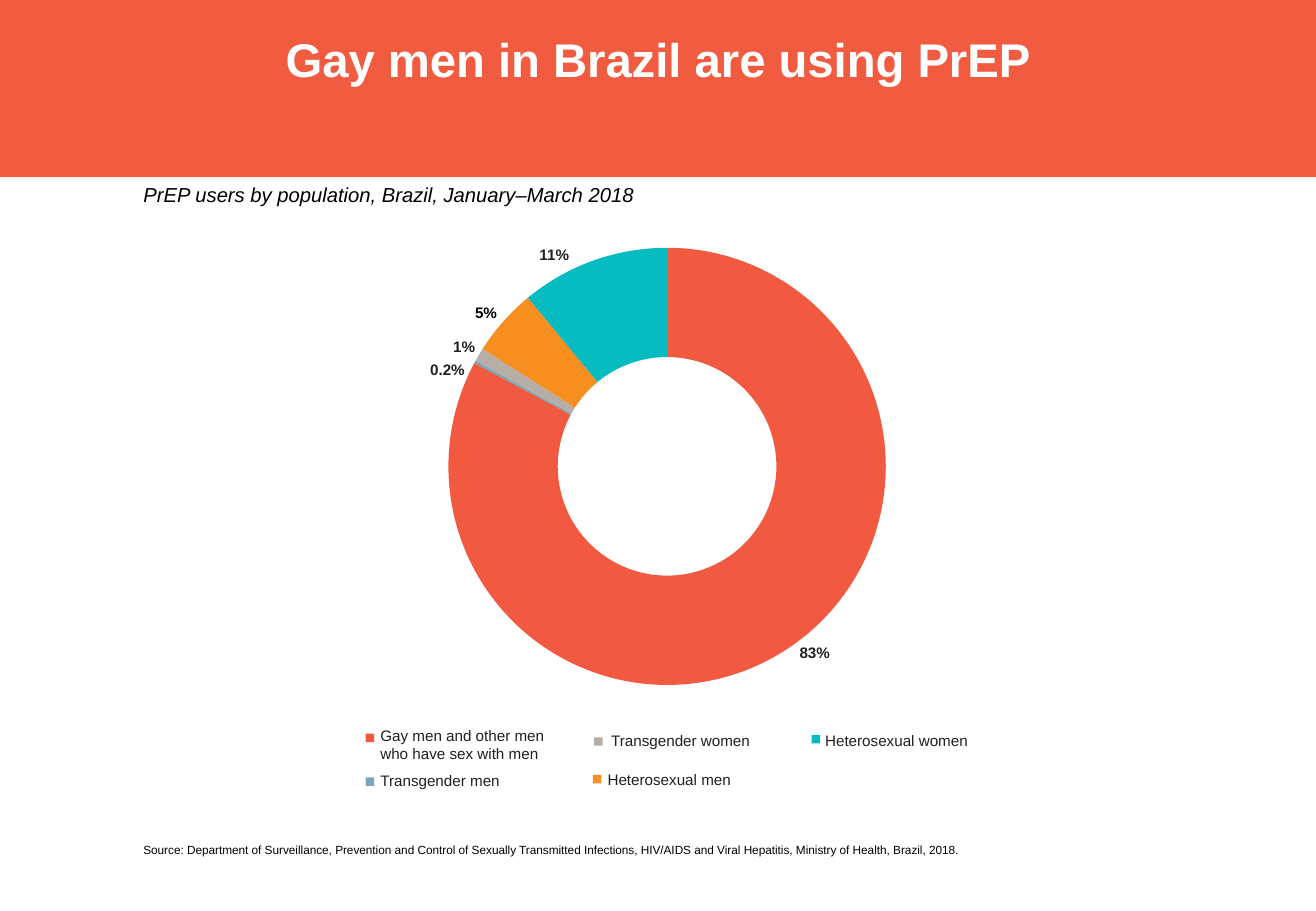
from collections import namedtuple
from dataclasses import dataclass

from pptx import Presentation
from pptx.chart.data import CategoryChartData
from pptx.dml.color import RGBColor
from pptx.enum.chart import XL_CHART_TYPE as ChartType
from pptx.enum.shapes import MSO_SHAPE as Preset
from pptx.enum.text import MSO_ANCHOR as Anchor, MSO_AUTO_SIZE as AutoSize, PP_ALIGN as Align
from pptx.oxml import parse_xml
from pptx.oxml.ns import nsdecls
from pptx.util import Inches, Pt


@dataclass(frozen=True)
class Theme:
    font: str = "Arial"
    band: str = "F15B40"
    white: str = "FFFFFF"
    black: str = "000000"
    ink: str = "231F20"
    title: int = 28
    subtitle: int = 12
    label: int = 9
    source: int = 7


THEME = Theme()
Box = namedtuple("Box", "left top width height")
Population = namedtuple("Population", "name share label color label_color label_at key_at name_at name_width")

# Clockwise from the top; places are relative to the ring box or the legend box
POPULATIONS = [
    Population("Gay men and other men who have sex with men", 83, "83%", "F15A40",
               THEME.ink, (2.89, 3.26), (0, 0.06), (0.12, 0), 1.45),
    Population("Transgender men", 0.2, "0.2%", "78A7B7",
               THEME.ink, (-0.15, 0.93), (0, 0.42), (0.12, 0.37), 1.09),
    Population("Transgender women", 1, "1%", "B6AEA7",
               THEME.ink, (0.04, 0.74), (1.88, 0.09), (2.02, 0.04), 1.36),
    Population("Heterosexual men", 5, "5%", "F78E20",
               THEME.black, (0.22, 0.46), (1.87, 0.4), (1.99, 0.36), 1.18),
    Population("Heterosexual women", 11, "11%", "07BCC1",
               THEME.ink, (0.75, -0.02), (3.67, 0.07), (3.78, 0.04), 1.18),
]


def inches(box):
    return [Inches(length) for length in box]


def within(box, offset, width, height):
    return Box(box.left + offset[0], box.top + offset[1], width, height)


def write(frame, text, size, color, insets=(0, 0, 0, 0), align=Align.LEFT, **font_values):
    left, top, right, bottom = inches(insets)
    frame_values = {"auto_size": AutoSize.NONE, "word_wrap": True, "vertical_anchor": Anchor.TOP,
                    "margin_left": left, "margin_top": top,
                    "margin_right": right, "margin_bottom": bottom}
    for name, value in frame_values.items():
        setattr(frame, name, value)
    paragraph = frame.paragraphs[0]
    paragraph.alignment = align
    run = paragraph.add_run()
    run.text = text
    for name, value in {"name": THEME.font, "size": Pt(size), **font_values}.items():
        setattr(run.font, name, value)
    run.font.color.rgb = RGBColor.from_string(color)


def add_text(slide, box, *args, **kwargs):
    write(slide.shapes.add_textbox(*inches(box)).text_frame, *args, **kwargs)


def paint(fill, color):
    fill.solid()
    fill.fore_color.rgb = RGBColor.from_string(color)


def add_rectangle(slide, box, color):
    rectangle = slide.shapes.add_shape(Preset.RECTANGLE, *inches(box))
    rectangle.shadow.inherit = False
    paint(rectangle.fill, color)
    rectangle.line.fill.background()
    return rectangle


def add_header(slide, box):
    # The band goes behind the title placeholder
    band = add_rectangle(slide, box, THEME.band)
    slide.shapes._spTree.insert(2, band._element)
    title = slide.shapes.title
    title_box = within(box, (0, 0.2), box.width, 0.57)
    for name, value in zip(title_box._fields, inches(title_box)):
        setattr(title, name, value)
    write(title.text_frame, "Gay men in Brazil are using PrEP", THEME.title, THEME.white,
          insets=(0.1, 0.05, 0.1, 0.05), align=Align.CENTER, bold=True)


def add_ring(slide, box):
    # Doughnut chart, with a margin around the plot area
    data = CategoryChartData()
    data.categories = [population.name for population in POPULATIONS]
    data.add_series("PrEP users (%)", [population.share for population in POPULATIONS])
    margin = 0.2
    frame = within(box, (-margin, -margin), box.width + 2 * margin, box.height + 2 * margin)
    chart = slide.shapes.add_chart(ChartType.DOUGHNUT, *inches(frame), data).chart
    chart.has_legend = False
    chart.has_title = False
    chart.font.name = THEME.font
    chart.font.size = Pt(THEME.label)
    chart.font.color.rgb = RGBColor.from_string(THEME.ink)

    places = {"x": margin / frame.width, "y": margin / frame.height,
              "w": box.width / frame.width, "h": box.height / frame.height}
    modes = '<c:layoutTarget val="inner"/><c:xMode val="edge"/><c:yMode val="edge"/>'
    sizes = "".join(f'<c:{name} val="{value:.2f}"/>' for name, value in places.items())
    plot_area = chart._chartSpace.chart.plotArea
    for layout in plot_area.xpath("c:layout"):
        plot_area.remove(layout)
    plot_area.insert(0, parse_xml(
        f'<c:layout {nsdecls("c")}><c:manualLayout>{modes}{sizes}</c:manualLayout></c:layout>'))

    # Slice colours and outside percentages
    points = chart.plots[0].series[0].points
    for index, population in enumerate(POPULATIONS):
        slice_format = points[index].format
        paint(slice_format.fill, population.color)
        slice_format.line.fill.background()
        add_text(slide, within(box, population.label_at, 0.34, 0.21), population.label,
                 THEME.label, population.label_color, bold=True)


def add_legend(slide, box):
    for population in POPULATIONS:
        add_rectangle(slide, within(box, population.key_at, 0.07, 0.07), population.color)
        add_text(slide, within(box, population.name_at, population.name_width, 0.32),
                 population.name, THEME.label, THEME.ink)


def build_slide(deck):
    slide = deck.slides.add_slide(deck.slide_layouts[5])
    add_header(slide, Box(0, 0, 10.83, 1.46))
    add_text(slide, Box(0, 1.45, 10.83, 0.3),
             "PrEP users by population, Brazil, January–March 2018",
             THEME.subtitle, THEME.black, insets=(1.18, 0.05, 0.31, 0.05), italic=True)
    add_ring(slide, Box(3.69, 2.04, 3.6, 3.6))
    add_legend(slide, Box(3.01, 5.98, 4.96, 0.69))
    add_text(slide, Box(0, 6.89, 10.83, 0.22),
             "Source: Department of Surveillance, Prevention and Control of Sexually Transmitted "
             "Infections, HIV/AIDS and Viral Hepatitis, Ministry of Health, Brazil, 2018.",
             THEME.source, THEME.black, insets=(1.18, 0.05, 0.2, 0.05))


def main():
    deck = Presentation()
    deck.slide_width = Inches(10.83)
    deck.slide_height = Inches(7.5)
    build_slide(deck)
    deck.save("out.pptx")


if __name__ == "__main__":
    main()
